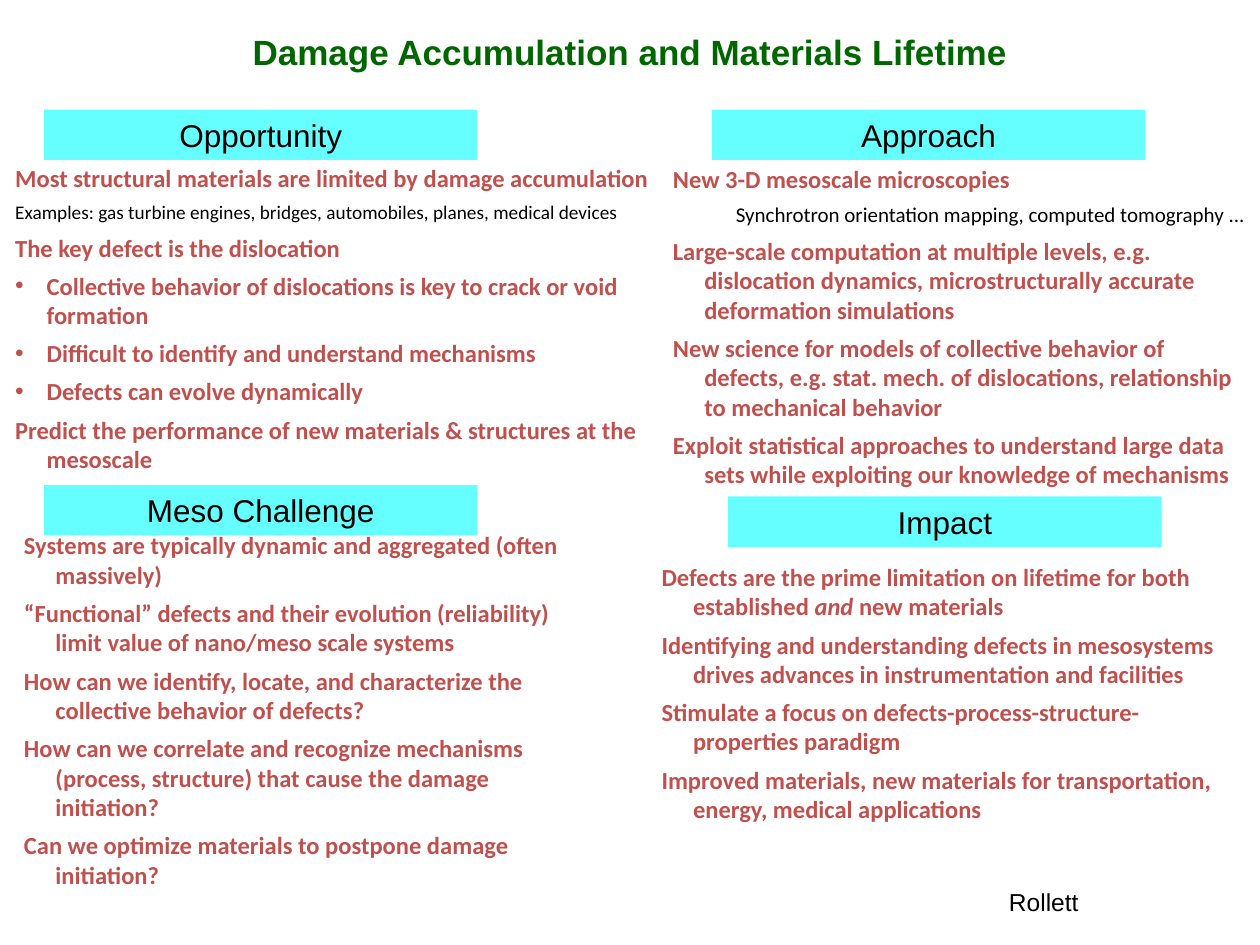
from dataclasses import dataclass

from lxml import etree
from pptx import Presentation, util as u
from pptx.dml.color import RGBColor
from pptx.enum import shapes, text
from pptx.oxml.ns import qn


@dataclass
class Theme:
    green: str = "006600"
    cyan: str = "66FFFF"
    red: str = "C0504D"
    black: str = "000000"
    head_font: str = "Arial"
    body_font: str = "Calibri"
    title: int = 20
    heading: int = 18
    body: int = 14
    detail: int = 12
    small: int = 11
    gap: int = 5


th = Theme()


def place(sp, left, top, width, height):
    sp.left, sp.top = u.Inches(left), u.Inches(top)
    sp.width, sp.height = u.Inches(width), u.Inches(height)


def add_run(p, words, font, size, color, bold=False, italic=False):
    r = p.add_run()
    r.text = words
    r.font.name, r.font.size = font, u.Pt(size)
    r.font.bold, r.font.italic = bold, italic
    r.font.color.rgb = RGBColor.from_string(color)


# Slide with a title and four body placeholders
prs = Presentation()
prs.slide_width, prs.slide_height = u.Inches(10), u.Inches(7.5)
s = prs.slides.add_slide(prs.slide_layouts.get_by_name("Comparison"))

# Title
title = s.shapes.title
place(title, 0, 0.19, 10, 0.44)
tf = title.text_frame
tf.auto_size = text.MSO_AUTO_SIZE.NONE
tf.vertical_anchor = text.MSO_ANCHOR.TOP
p = tf.paragraphs[0]
p.alignment = text.PP_ALIGN.CENTER
add_run(p, "Damage Accumulation and Materials Lifetime",
        th.head_font, th.title, th.green, bold=True)

# Heading bars, kept behind the lists
bars = [
    ("Opportunity", 0.35, 0.87),
    ("Meso Challenge", 0.35, 3.85),
    ("Approach", 5.65, 0.87),
    ("Impact", 5.78, 3.94),
]
for words, left, top in bars:
    sp = s.shapes.add_shape(shapes.MSO_SHAPE.RECTANGLE, u.Inches(left), u.Inches(top),
                            u.Inches(3.44), u.Inches(0.4))
    sp.shadow.inherit = False
    sp.fill.solid()
    sp.fill.fore_color.rgb = RGBColor.from_string(th.cyan)
    sp.line.fill.background()
    p = sp.text_frame.paragraphs[0]
    p.alignment = text.PP_ALIGN.CENTER
    add_run(p, words, th.head_font, th.heading, th.black)
    title.element.addnext(sp.element)

# Lists: box, then (style, runs) for each paragraph
# Styles: level, left margin, first-line indent, bullet, size, colour, bold
styles = {
    "point": (0, 0.25, -0.25, False, th.body, th.red, True),
    "bullet": (0, 0.25, -0.25, True, th.body, th.red, True),
    "closing": (1, 0.25, -0.25, False, th.body, th.red, True),
    "examples": (1, 0.25, -0.25, False, th.small, th.black, False),
    "detail": (1, 0.5, 0, False, th.detail, th.black, False),
}
lists = {
    (0.02, 1.24, 5.24, 2.59): [
        ("point", ["Most structural materials are limited by damage accumulation"]),
        ("examples", ["Examples: gas turbine engines, bridges, automobiles, planes, medical devices"]),
        ("point", ["The key defect is the dislocation"]),
        ("bullet", ["Collective behavior of dislocations is key to crack or void formation"]),
        ("bullet", ["Difficult to identify and understand mechanisms"]),
        ("bullet", ["Defects can evolve dynamically"]),
        ("closing", ["Predict the performance of new materials & structures at the mesoscale"]),
    ],
    (0.09, 4.16, 4.75, 2.74): [
        ("point", ["Systems are typically dynamic and aggregated (often massively)"]),
        ("point", ["“Functional” defects and their evolution (reliability) limit value of "
                   "nano/meso scale systems"]),
        ("point", ["How can we identify, locate, and characterize the collective behavior of defects?"]),
        ("point", ["How can we correlate and recognize mechanisms (process, structure) "
                   "that cause the damage initiation?"]),
        ("point", ["Can we optimize materials to postpone damage initiation?"]),
    ],
    (5.24, 1.25, 4.76, 2.7): [
        ("point", ["New 3-D mesoscale microscopies"]),
        ("detail", ["Synchrotron orientation mapping, computed tomography ..."]),
        ("point", ["Large-scale computation at multiple levels, e.g. dislocation dynamics, "
                   "microstructurally accurate deformation simulations"]),
        ("point", ["New science for models of collective behavior of defects, e.g. stat. mech. "
                   "of dislocations, relationship to mechanical behavior"]),
        ("point", ["Exploit statistical approaches to understand large data sets while "
                   "exploiting our knowledge of mechanisms"]),
    ],
    (5.15, 4.41, 4.81, 2.47): [
        # The second run of a paragraph is italic
        ("point", ["Defects are the prime limitation on lifetime for both established ",
                   "and ", "new materials"]),
        ("point", ["Identifying and understanding defects in mesosystems drives advances "
                   "in instrumentation and facilities"]),
        ("point", ["Stimulate a focus on defects-process-structure-properties paradigm"]),
        ("point", ["Improved materials, new materials for transportation, energy, "
                   "medical applications"]),
    ],
}
bodies = [sp for sp in s.placeholders if sp.placeholder_format.idx > 0]
for sp, (box, paragraphs) in zip(bodies, lists.items()):
    place(sp, *box)
    tf = sp.text_frame
    tf.word_wrap = True
    tf.auto_size = text.MSO_AUTO_SIZE.NONE
    tf.vertical_anchor = text.MSO_ANCHOR.TOP
    for i, (style, runs) in enumerate(paragraphs):
        level, margin, indent, bullet, size, color, bold = styles[style]
        p = tf.add_paragraph() if i else tf.paragraphs[0]
        pPr = p._p.get_or_add_pPr()
        pPr.set("marL", str(u.Inches(margin)))
        pPr.set("indent", str(u.Inches(indent)))
        if bullet:
            etree.SubElement(pPr, qn("a:buFont")).set("typeface", th.head_font)
            etree.SubElement(pPr, qn("a:buChar")).set("char", "•")
        else:
            etree.SubElement(pPr, qn("a:buNone"))
        p.level = level
        p.alignment = text.PP_ALIGN.LEFT
        p.space_before = u.Pt(th.gap if i else 0)
        for j, words in enumerate(runs):
            add_run(p, words, th.body_font, size, color, bold, italic=j == 1)

# Author
sp = s.shapes.add_textbox(u.Inches(7.91), u.Inches(6.99), u.Inches(0.76), u.Inches(0.34))
sp.text_frame.word_wrap = False
add_run(sp.text_frame.paragraphs[0], "Rollett", th.head_font, th.body, th.black)

prs.save("out.pptx")
